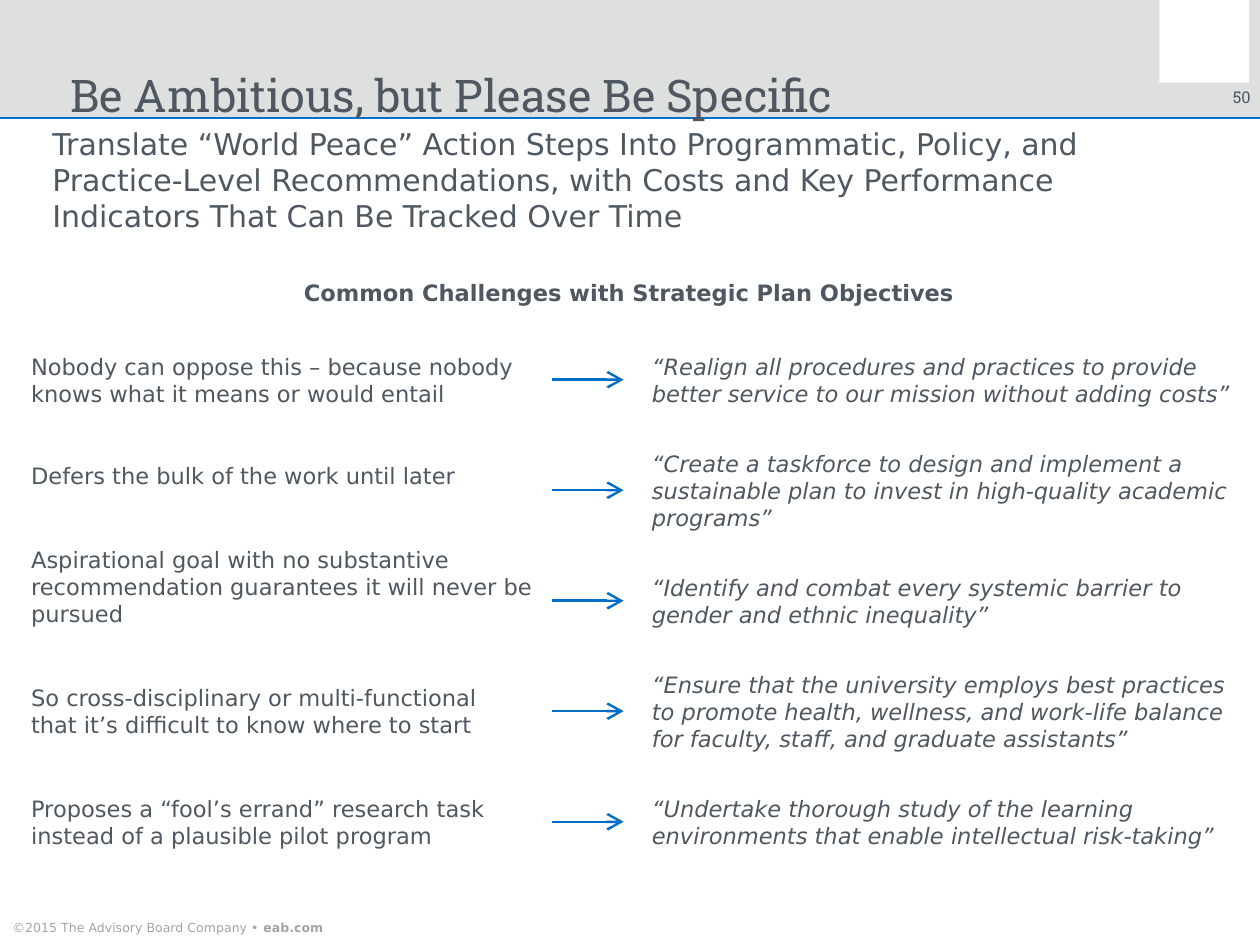
from lxml import etree
from pptx import Presentation
from pptx.dml.color import RGBColor
from pptx.enum import shapes, text
from pptx.oxml.ns import qn
from pptx.util import Cm, Pt

COLOURS = {"ink": "4F5861", "band": "DEE0E0", "rule": "0070CD",
           "arrow": "006EC8", "footer": "A0A4A9", "white": "FFFFFF"}
BODY_FONT, HEAD_FONT = "DejaVu Sans", "Roboto Slab"

TITLE = "Be Ambitious, but Please Be Specific"
SUBTITLE = ("Translate “World Peace” Action Steps Into Programmatic, Policy, and "
            "Practice-Level Recommendations, with Costs and Key Performance "
            "Indicators That Can Be Tracked Over Time")
HEADING = "Common Challenges with Strategic Plan Objectives"
PAGE_NUMBER = "50"
FOOTER = [("©2015 The Advisory Board Company • ", False), ("eab.com", True)]

# challenge, example, challenge width, challenge rise
CHALLENGES = [
    ("Nobody can oppose this – because nobody knows what it means or would entail",
     "“Realign all procedures and practices to provide better service to our "
     "mission without adding costs”", 7.21, 0),
    ("Defers the bulk of the work until later",
     "“Create a taskforce to design and implement a sustainable plan to invest in "
     "high-quality academic programs”", 7.21, 0.2),
    ("Aspirational goal with no substantive recommendation guarantees it will "
     "never be pursued",
     "“Identify and combat every systemic barrier to gender and ethnic inequality”",
     7.21, 0.2),
    ("So cross-disciplinary or multi-functional that it’s difficult to know where "
     "to start",
     "“Ensure that the university employs best practices to promote health, "
     "wellness, and work-life balance for faculty, staff, and graduate assistants”",
     6.78, 0),
    ("Proposes a “fool’s errand” research task instead of a plausible pilot program",
     "“Undertake thorough study of the learning environments that enable "
     "intellectual risk-taking”", 7.21, 0),
]
FIRST_ROW, ROW_STEP, ROW_HEIGHT = 5.36, 1.56, 1.42


def colour(name):
    return RGBColor.from_string(COLOURS[name])


def style(para, size, name=BODY_FONT, ink="ink", bold=False, italic=False):
    font = para.font
    font.name, font.size, font.bold, font.italic = name, Pt(size), bold, italic
    font.color.rgb = colour(ink)


def set_frame(box, insets=(0, 0, 0, 0), anchor=text.MSO_ANCHOR.TOP, wrap=True):
    frame = box.text_frame
    frame.word_wrap = wrap
    frame.vertical_anchor = anchor
    (frame.margin_left, frame.margin_top,
     frame.margin_right, frame.margin_bottom) = map(Cm, insets)
    return frame.paragraphs[0]


def add_text(page, place, words, size, insets=(0, 0, 0, 0),
             anchor=text.MSO_ANCHOR.TOP, wrap=True, **look):
    box = page.shapes.add_textbox(*map(Cm, place))
    para = set_frame(box, insets, anchor, wrap)
    para.text = words
    style(para, size, **look)
    return para


def add_block(page, place, fill):
    block = page.shapes.add_shape(shapes.MSO_SHAPE.RECTANGLE, *map(Cm, place))
    block.shadow.inherit = False
    block.fill.solid()
    block.fill.fore_color.rgb = colour(fill)
    block.line.fill.background()
    return block


def add_line(page, left, right, height, ink, width, arrow=False):
    line = page.shapes.add_connector(shapes.MSO_CONNECTOR.STRAIGHT,
                                     Cm(left), Cm(height), Cm(right), Cm(height))
    line.line.color.rgb = colour(ink)
    line.line.width = Pt(width)
    if arrow:
        etree.SubElement(line.line._get_or_add_ln(), qn("a:tailEnd"), type="arrow")
    etree.SubElement(line._element.spPr, qn("a:effectLst"))


def add_header(page):
    add_block(page, (0, 0, 17.78, 1.68), "band")
    add_line(page, 0, 17.78, 1.66, "rule", 0.75)
    add_block(page, (16.36, 0, 1.27, 1.17), "white")
    number = add_block(page, (17.12, 1.24, 0.66, 0.28), "band")
    para = set_frame(number, (0, 0, 0.13, 0))
    para.text = PAGE_NUMBER
    para.alignment = text.PP_ALIGN.RIGHT
    style(para, 6.5, HEAD_FONT)

    title = page.shapes.title
    title._element.getparent().append(title._element)
    title.left, title.top, title.width, title.height = map(Cm, (0.74, 0.86, 15.24, 0.71))
    para = set_frame(title, (0.25, 0.1, 0.25, 0.1))
    para.text = TITLE
    para.alignment = text.PP_ALIGN.LEFT
    style(para, 18, HEAD_FONT)


def add_challenges(page):
    add_text(page, (4.29, 3.94, 9.22, 0.38), HEADING, 9, wrap=False, bold=True)
    middle = text.MSO_ANCHOR.MIDDLE
    for row, (challenge, example, width, rise) in enumerate(CHALLENGES):
        centre = FIRST_ROW + row * ROW_STEP
        top = centre - ROW_HEIGHT / 2
        add_text(page, (0.44, top - rise, width, ROW_HEIGHT), challenge, 9, anchor=middle)
        add_line(page, 7.79, 8.8, centre, "arrow", 1, arrow=True)
        add_text(page, (8.95, top, 8.88, ROW_HEIGHT), example, 9,
                 insets=(0.25, 0.13, 0.25, 0.13), anchor=middle, italic=True)


def add_footer(page):
    para = add_text(page, (0, 13, 5.87, 0.33), "", 5, insets=(0.18, 0, 0, 0.13),
                    anchor=text.MSO_ANCHOR.BOTTOM, ink="footer")
    for words, bold in FOOTER:
        span = para.add_run()
        span.text = words
        span.font.bold = bold


def main():
    deck = Presentation()
    deck.slide_width, deck.slide_height = Cm(17.78), Cm(13.34)
    page = deck.slides.add_slide(deck.slide_layouts[5])
    add_header(page)
    add_text(page, (0.74, 1.78, 16.26, 1.55), SUBTITLE, 12)
    add_challenges(page)
    add_footer(page)
    deck.save("out.pptx")


if __name__ == "__main__":
    main()
